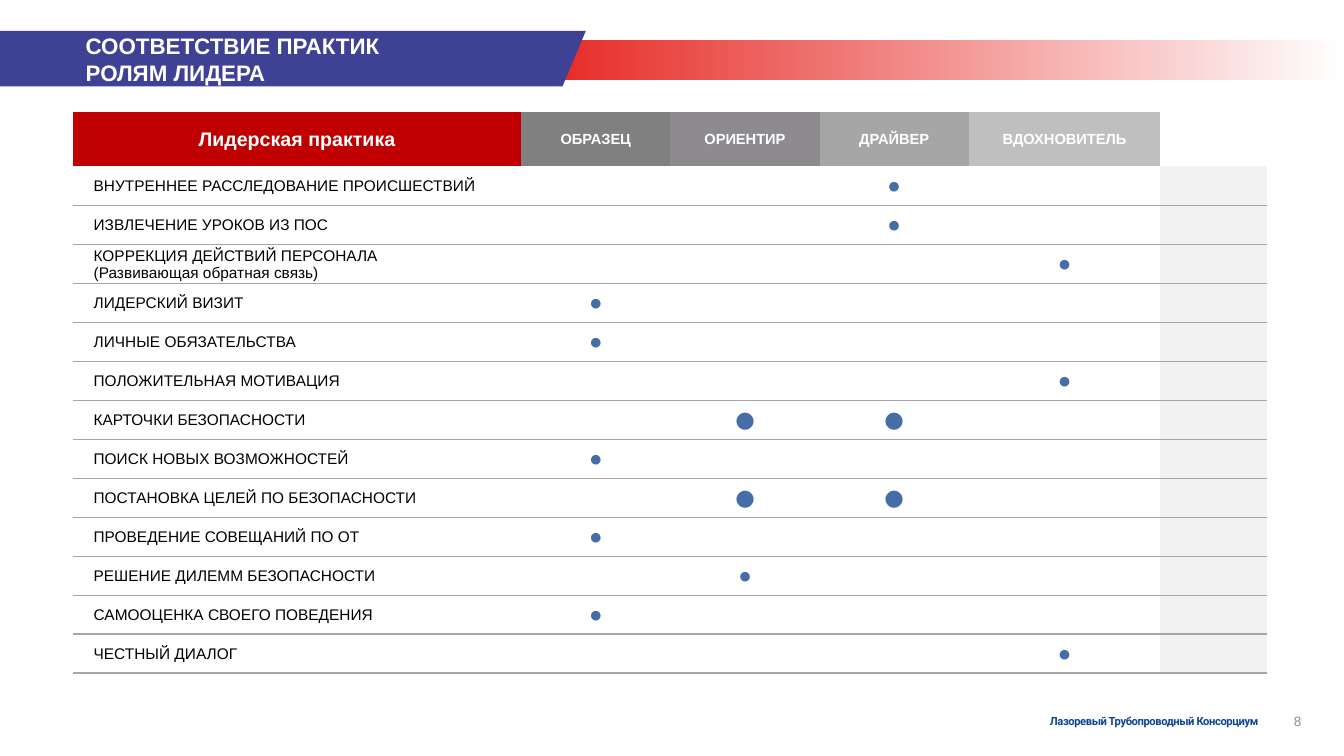
from lxml import etree
from pptx import Presentation
from pptx import util as u
from pptx.dml.color import RGBColor
from pptx.enum import shapes, text
from pptx.oxml import ns

WHITE = RGBColor(0xFF, 0xFF, 0xFF)
BLACK = RGBColor(0, 0, 0)
RED = RGBColor(0xE6, 0x2B, 0x27)
DARK_RED = RGBColor(0xC0, 0, 0)
INDIGO = RGBColor(0x3F, 0x41, 0x95)
NAVY = RGBColor(0x0B, 0x43, 0x95)
DOT_BLUE = RGBColor(0x45, 0x6E, 0xA9)
SLATE = RGBColor(0x8D, 0x8B, 0x8F)
RULE_GREY = RGBColor(0xA6, 0xA6, 0xA6)
PALE_GREY = RGBColor(0xF2, 0xF2, 0xF2)

ROLES = [
    ("ОБРАЗЕЦ", RGBColor(0x80, 0x80, 0x80)),
    ("ОРИЕНТИР", SLATE),
    ("ДРАЙВЕР", RULE_GREY),
    ("ВДОХНОВИТЕЛЬ", RGBColor(0xBF, 0xBF, 0xBF)),
]
EXAMPLE, GUIDE, DRIVER, INSPIRER = range(1, 5)
PRACTICES = [
    ("ВНУТРЕННЕЕ РАССЛЕДОВАНИЕ ПРОИСШЕСТВИЙ", [DRIVER]),
    ("ИЗВЛЕЧЕНИЕ УРОКОВ ИЗ ПОС", [DRIVER]),
    ("КОРРЕКЦИЯ ДЕЙСТВИЙ ПЕРСОНАЛА\n(Развивающая обратная связь)", [INSPIRER]),
    ("ЛИДЕРСКИЙ ВИЗИТ", [EXAMPLE]),
    ("ЛИЧНЫЕ ОБЯЗАТЕЛЬСТВА", [EXAMPLE]),
    ("ПОЛОЖИТЕЛЬНАЯ МОТИВАЦИЯ", [INSPIRER]),
    ("КАРТОЧКИ БЕЗОПАСНОСТИ", [GUIDE, DRIVER]),
    ("ПОИСК НОВЫХ ВОЗМОЖНОСТЕЙ", [EXAMPLE]),
    ("ПОСТАНОВКА ЦЕЛЕЙ ПО БЕЗОПАСНОСТИ", [GUIDE, DRIVER]),
    ("ПРОВЕДЕНИЕ СОВЕЩАНИЙ ПО ОТ", [EXAMPLE]),
    ("РЕШЕНИЕ ДИЛЕММ БЕЗОПАСНОСТИ", [GUIDE]),
    ("САМООЦЕНКА СВОЕГО ПОВЕДЕНИЯ", [EXAMPLE]),
    ("ЧЕСТНЫЙ ДИАЛОГ", [INSPIRER]),
]
COLUMN_WIDTHS = [320.2, 106.6, 106.6, 106.6, 136.8, 76.4]
HEADER_HEIGHT, ROW_HEIGHT = 38.9, 27.85
CENTER, LEFT = text.PP_ALIGN.CENTER, text.PP_ALIGN.LEFT


def write(frame, words, size, color, bold=False, align=LEFT, font="Arial", spacing=None):
    para = frame.paragraphs[0]
    para.alignment = align
    for index, line in enumerate(words.split("\n")):
        if index:
            para.add_line_break()
        span = para.add_run()
        span.text = line
        span.font.name = font
        span.font.size = u.Pt(size)
        span.font.bold = bold
        span.font.color.rgb = color
        if spacing is not None:
            span._r.get_or_add_rPr().set("spc", str(spacing))


def set_margins(target, left, top, right, bottom):
    target.margin_left, target.margin_top = u.Pt(left), u.Pt(top)
    target.margin_right, target.margin_bottom = u.Pt(right), u.Pt(bottom)


def add_label(page, left, top, width, height, words, size, color, **style):
    box = page.shapes.add_textbox(u.Pt(left), u.Pt(top), u.Pt(width), u.Pt(height))
    frame = box.text_frame
    frame.word_wrap = True
    frame.vertical_anchor = text.MSO_ANCHOR.MIDDLE
    set_margins(frame, 0, 0, 0, 0)
    write(frame, words, size, color, **style)


def add_banner(page):
    fade = page.shapes.add_shape(
        shapes.MSO_SHAPE.RECTANGLE, u.Pt(395), u.Pt(28.6), u.Pt(565), u.Pt(28.4))
    fade.fill.gradient()
    fade.fill.gradient_angle = 0
    for stop, position, color in zip(fade.fill.gradient_stops, (0, 1), (RED, WHITE)):
        stop.position = position
        stop.color.rgb = color
    outline = page.shapes.build_freeform(0, u.Pt(22), scale=1.0)
    corners = [(418.5, 22), (401.8, 61.7), (0, 61.7)]
    outline.add_line_segments([(u.Pt(x), u.Pt(y)) for x, y in corners], close=True)
    ribbon = outline.convert_to_shape()
    ribbon.fill.solid()
    ribbon.fill.fore_color.rgb = INDIGO
    for shape in (fade, ribbon):
        shape.line.fill.background()
        shape.shadow.inherit = False


def place_title(page, words):
    title = page.shapes.title
    title.left, title.top, title.width, title.height = (
        u.Pt(54), u.Pt(22), u.Pt(345), u.Pt(40.3))
    frame = title.text_frame
    frame.word_wrap = True
    frame.auto_size = text.MSO_AUTO_SIZE.NONE
    frame.vertical_anchor = text.MSO_ANCHOR.MIDDLE
    set_margins(frame, 7.2, 3.6, 0, 3.6)
    write(frame, words, 16, WHITE, bold=True)
    title.element.getparent().append(title.element)


def set_borders(cell, ruled_sides):
    props = cell._tc.get_or_add_tcPr()
    for index, side in enumerate(("lnL", "lnR", "lnT", "lnB")):
        line = etree.Element(ns.qn("a:" + side), w=str(u.Pt(1)))
        if side in ruled_sides:
            fill = etree.SubElement(line, ns.qn("a:solidFill"))
            etree.SubElement(fill, ns.qn("a:srgbClr"), val=str(RULE_GREY))
        else:
            etree.SubElement(line, ns.qn("a:noFill"))
        props.insert(index, line)


def format_cell(cell, color, ruled_sides):
    cell.vertical_anchor = text.MSO_ANCHOR.MIDDLE
    set_margins(cell, 0, 0, 0, 0)
    if color is None:
        cell.fill.background()
    else:
        cell.fill.solid()
        cell.fill.fore_color.rgb = color
    set_borders(cell, ruled_sides)


def add_matrix(page):
    height = HEADER_HEIGHT + ROW_HEIGHT * len(PRACTICES)
    table = page.shapes.add_table(
        len(PRACTICES) + 1, len(COLUMN_WIDTHS), u.Pt(52.1), u.Pt(80),
        u.Pt(sum(COLUMN_WIDTHS)), u.Pt(height)).table
    table.horz_banding = False
    table.first_row = False
    for column, width in zip(table.columns, COLUMN_WIDTHS):
        column.width = u.Pt(width)
    for index, row in enumerate(table.rows):
        row.height = u.Pt(ROW_HEIGHT if index else HEADER_HEIGHT)

    headings = [("Лидерская практика", DARK_RED)] + ROLES
    for column, (words, color) in enumerate(headings):
        cell = table.cell(0, column)
        format_cell(cell, color, ())
        write(cell.text_frame, words, 10.5 if column else 14, WHITE, bold=True, align=CENTER)
    last = len(COLUMN_WIDTHS) - 1
    format_cell(table.cell(0, last), None, ())

    for row, (practice, roles) in enumerate(PRACTICES, 1):
        sides = ("lnT", "lnB") if row > 1 else ("lnB",)
        for column in range(last + 1):
            format_cell(table.cell(row, column), PALE_GREY if column == last else None, sides)
        name = table.cell(row, 0)
        set_margins(name, 14.8, 0.5, 0.5, 0)
        write(name.text_frame, practice, 11, BLACK)
        dot_font = "Roboto" if len(roles) > 1 else "Arial"
        for role in roles:
            write(table.cell(row, role).text_frame, "●", 16, DOT_BLUE, align=CENTER, font=dot_font)


def main():
    deck = Presentation()
    deck.slide_width, deck.slide_height = u.Pt(960), u.Pt(540)
    page = deck.slides.add_slide(deck.slide_layouts[5])
    add_banner(page)
    add_label(page, 908.6, 509, 36.7, 11.6, "8", 9.7, SLATE, align=CENTER)
    add_label(page, 750, 505, 165, 20, "Лазоревый Трубопроводный Консорциум", 8, NAVY,
              bold=True, font="Roboto", spacing=-30)
    add_matrix(page)
    place_title(page, "СООТВЕТСТВИЕ ПРАКТИК\nРОЛЯМ ЛИДЕРА")
    deck.save("out.pptx")


if __name__ == "__main__":
    main()
